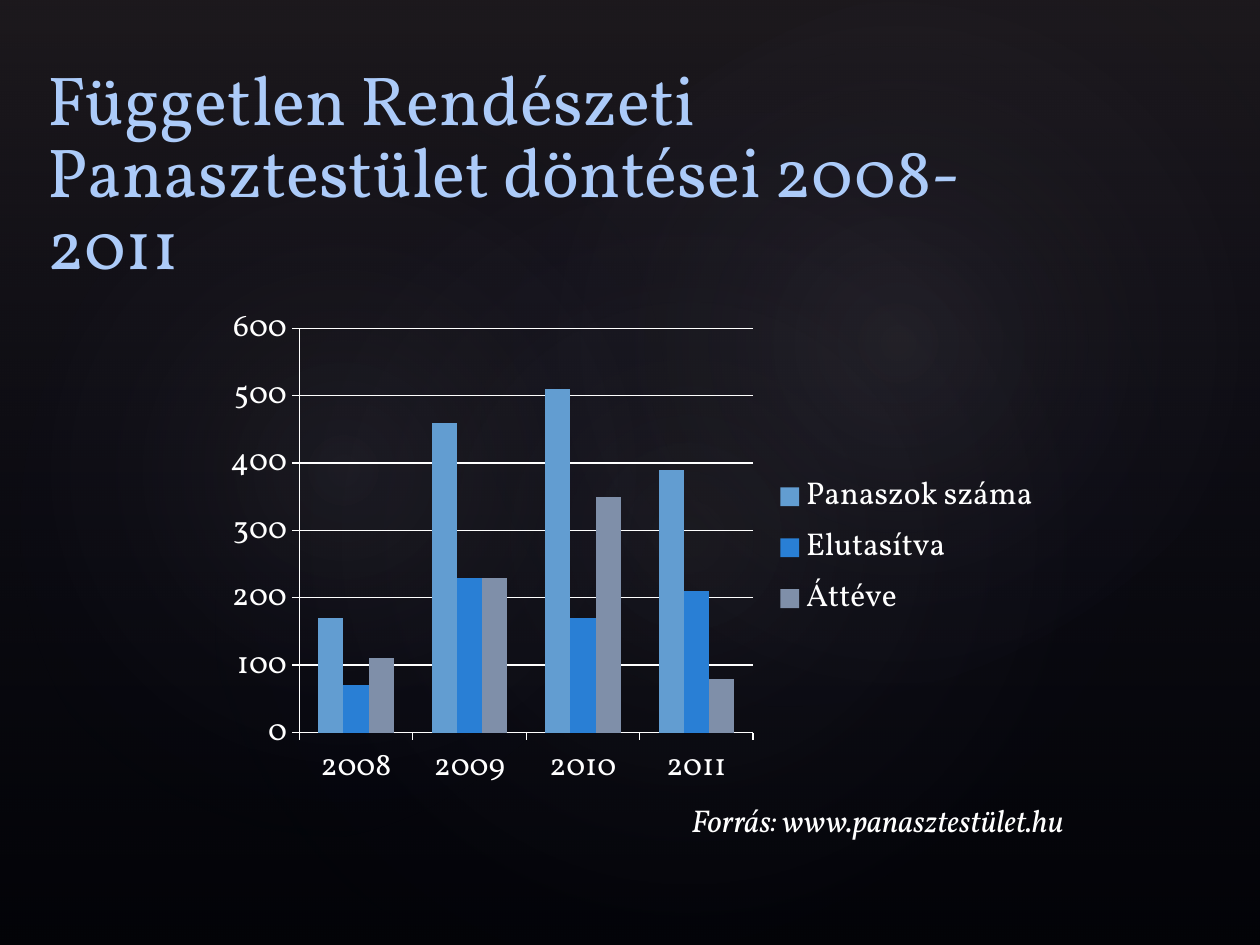
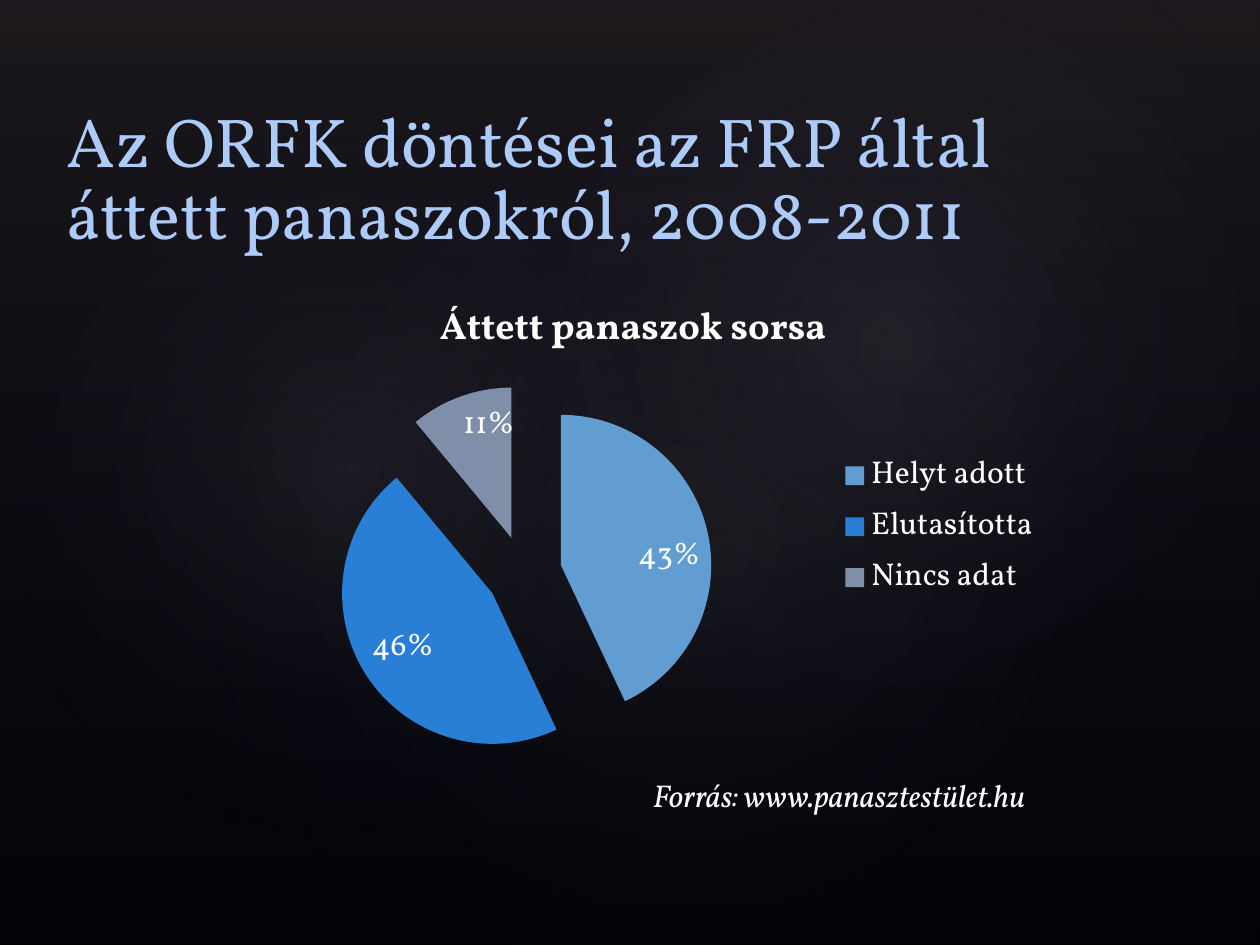
from pptx import Presentation
from pptx.chart.data import CategoryChartData
from pptx.dml.color import RGBColor
from pptx.enum.chart import XL_CHART_TYPE, XL_LABEL_POSITION, XL_LEGEND_POSITION, XL_TICK_MARK
from pptx.enum.shapes import MSO_SHAPE
from pptx.enum.text import MSO_ANCHOR, MSO_AUTO_SIZE, PP_ALIGN
from pptx.oxml import parse_xml
from pptx.oxml.ns import nsdecls, qn
from pptx.util import Pt

BLACK = RGBColor(0x00, 0x00, 0x00)
WHITE = RGBColor(0xFF, 0xFF, 0xFF)
TITLE_BLUE = RGBColor(0xAC, 0xCB, 0xF9)
NAVY = RGBColor(0x24, 0x28, 0x52)
SMOKE = RGBColor(0x50, 0x46, 0x52)
MIST = RGBColor(0xC4, 0xBC, 0xC6)
ACCENTS = [RGBColor(0x62, 0x9D, 0xD1), RGBColor(0x29, 0x7F, 0xD5), RGBColor(0x7F, 0x8F, 0xA9)]
FONT = "Vollkorn"
WIDTH, HEIGHT = 720, 540
SOURCE = "Forrás: www.panasztestület.hu"

RECT, OVAL = MSO_SHAPE.RECTANGLE, MSO_SHAPE.OVAL
COLUMNS, PIE = XL_CHART_TYPE.COLUMN_CLUSTERED, XL_CHART_TYPE.PIE
RIGHT, TICK_OUT = XL_LEGEND_POSITION.RIGHT, XL_TICK_MARK.OUTSIDE
INSIDE_END = XL_LABEL_POSITION.INSIDE_END
LINEAR = '<a:lin ang="5400000" scaled="0"/>'
RADIAL = '<a:path path="circle"><a:fillToRect l="50000" t="50000" r="50000" b="50000"/></a:path>'


def style_font(font, size, color=WHITE, bold=False, italic=False):
    font.name, font.size, font.bold, font.italic = FONT, Pt(size), bold, italic
    font.color.rgb = color


def add_run(p, text, size, **style):
    r = p.add_run()
    r.text = text
    style_font(r.font, size, **style)


def add_glow(slide, kind, box, stops, direction, rotation=0):
    sp = slide.shapes.add_shape(kind, *map(Pt, box))
    sp.rotation = rotation
    sp.shadow.inherit = False
    sp.line.fill.background()
    stop_xml = "".join(
        f'<a:gs pos="{pos * 1000}"><a:srgbClr val="{color}">'
        f'<a:alpha val="{alpha * 1000}"/></a:srgbClr></a:gs>'
        for pos, color, alpha in stops)
    fill = parse_xml(f'<a:gradFill {nsdecls("a")} rotWithShape="1">'
                     f'<a:gsLst>{stop_xml}</a:gsLst>{direction}</a:gradFill>')
    sp._element.spPr.find(qn("a:prstGeom")).addnext(fill)
    return sp


def build_backdrop(master, slide):
    fill = master.background.fill
    fill.solid()
    fill.fore_color.rgb = BLACK
    glows = [add_glow(slide, RECT, (0, 0, WIDTH, HEIGHT),
                      [(0, SMOKE, 36), (100, NAVY, 10)], LINEAR)]
    for box, rotation, alpha in [((108, 82, 570, 449), 328.7, 7),
                                 ((-22, 92, 436, 353), 294.3, 8),
                                 ((258, 9, 510, 374), 328.7, 8)]:
        glows.append(add_glow(slide, OVAL, box,
                              [(0, MIST, alpha), (58, NAVY, 0)], RADIAL, rotation))
    for i, sp in enumerate(glows):
        master.shapes._spTree.insert(2 + i, sp._element)


def set_title(slide, text, left, top):
    sp = slide.shapes.title
    sp.left, sp.top, sp.width, sp.height = Pt(left), Pt(top), Pt(594), Pt(72)
    tf = sp.text_frame
    tf.word_wrap = True
    tf.auto_size = MSO_AUTO_SIZE.NONE
    tf.vertical_anchor = MSO_ANCHOR.BOTTOM
    p = tf.paragraphs[0]
    p.alignment = PP_ALIGN.LEFT
    p.line_spacing = 0.87
    add_run(p, text, 39.6, color=TITLE_BLUE)


def add_source(slide, left, top):
    tf = slide.shapes.add_textbox(Pt(left), Pt(top), Pt(284), Pt(29)).text_frame
    tf.word_wrap = True
    add_run(tf.paragraphs[0], SOURCE, 18, italic=True)


def add_chart(slide, kind, top, categories, series, number_format="General"):
    data = CategoryChartData(number_format=number_format)
    data.categories = categories
    for name, values in series:
        data.add_series(name, values)
    frame = slide.shapes.add_chart(kind, Pt(122), Pt(top), Pt(480), Pt(288), data)
    chart = frame.chart
    style_font(chart.font, 18)
    chart.has_legend = True
    chart.legend.position = RIGHT
    chart.legend.include_in_layout = False
    return chart


def paint(item, color):
    item.format.fill.solid()
    item.format.fill.fore_color.rgb = color


def white_line(item):
    item.format.line.color.rgb = WHITE
    item.format.line.width = Pt(0.75)


def add_decision_columns(slide):
    chart = add_chart(slide, COLUMNS, 169, ["2008", "2009", "2010", "2011"], [
        ("Panaszok száma", (170, 460, 510, 390)),
        ("Elutasítva", (70, 230, 170, 210)),
        ("Áttéve", (110, 230, 350, 80))])
    chart.has_title = False
    plot = chart.plots[0]
    plot.gap_width = 150
    plot.vary_by_categories = False
    for series, color in zip(plot.series, ACCENTS):
        paint(series, color)
    for axis in (chart.category_axis, chart.value_axis):
        axis.major_tick_mark = TICK_OUT
        white_line(axis)
    axis = chart.value_axis
    axis.minimum_scale, axis.maximum_scale, axis.major_unit = 0, 600, 100
    axis.has_major_gridlines = True
    white_line(axis.major_gridlines)


def add_outcome_pie(slide):
    name = "Áttett panaszok sorsa"
    chart = add_chart(slide, PIE, 157, ["Helyt adott", "Elutasította", "Nincs adat"],
                      [(name, (0.43, 0.46, 0.11))], "0%")
    chart.has_title = True
    add_run(chart.chart_title.text_frame.paragraphs[0], name, 21.6, bold=True)
    plot = chart.plots[0]
    plot.vary_by_categories = True
    series = plot.series[0]
    for i, color in enumerate(ACCENTS):
        paint(series.points[i], color)
    explosion = parse_xml(f'<c:explosion {nsdecls("c")} val="25"/>')
    series._element.find(qn("c:dPt")).addprevious(explosion)
    labels = series.data_labels
    labels.show_value = True
    labels.number_format, labels.number_format_is_linked = "0%", False
    labels.position = INSIDE_END
    style_font(labels.font, 18)


def main():
    prs = Presentation()
    prs.slide_width, prs.slide_height = Pt(WIDTH), Pt(HEIGHT)
    layout = prs.slide_layouts.get_by_name("Title Only")

    slide = prs.slides.add_slide(layout)
    build_backdrop(prs.slide_master, slide)
    set_title(slide, "Független Rendészeti Panasztestület döntései 2008-2011", 20, 94)
    add_decision_columns(slide)
    add_source(slide, 388, 454)

    slide = prs.slides.add_slide(layout)
    set_title(slide, "Az ORFK döntései az FRP által áttett panaszokról, 2008-2011", 31, 77)
    add_outcome_pie(slide)
    add_source(slide, 366, 440)

    prs.save("out.pptx")


if __name__ == "__main__":
    main()
